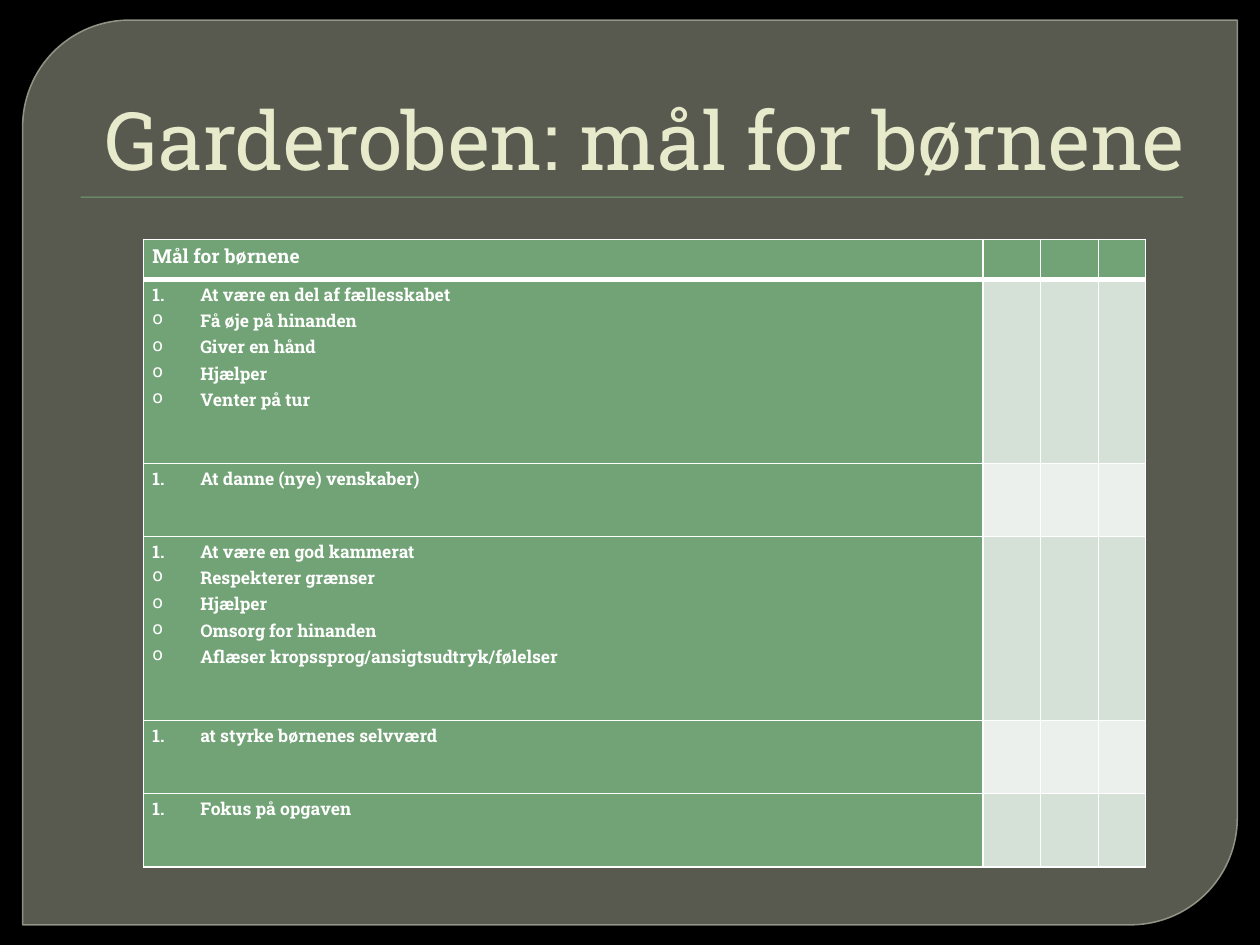
from dataclasses import dataclass

from lxml import etree
from pptx import Presentation
from pptx import util as u
from pptx.dml.color import RGBColor
from pptx.enum import shapes, text
from pptx.oxml.ns import qn

FONT = "Roboto Slab"
GREEN, WHITE, CREAM = "72A376", "FFFFFF", "E7EACB"
BANDS = ("D5E0D6", "EBF0EC")
COLUMNS = (6.66, 0.46, 0.46, 0.37)
HEADER_HEIGHT = 0.32


@dataclass
class Goal:
    title: str
    height: float = 0.58
    points: tuple[str, ...] = ()


GOALS = [
    Goal("At være en del af fællesskabet", 1.46,
         ("Få øje på hinanden", "Giver en hånd", "Hjælper", "Venter på tur")),
    Goal("At danne (nye) venskaber)"),
    Goal("At være en god kammerat", 1.46,
         ("Respekterer grænser", "Hjælper", "Omsorg for hinanden",
          "Aflæser kropssprog/ansigtsudtryk/følelser")),
    Goal("at styrke børnenes selvværd"),
    Goal("Fokus på opgaven"),
]


def paint(fill, color: str, alpha: int = 100) -> None:
    fill.solid()
    fill.fore_color.rgb = RGBColor.from_string(color)
    if alpha < 100:
        clr = fill._xPr.find(".//" + qn("a:srgbClr"))
        etree.SubElement(clr, qn("a:alpha"), val=str(alpha * 1000))


def add_box(slide, kind, left: float, top: float, width: float, height: float,
            color: str, alpha: int = 100):
    sp = slide.shapes.add_shape(kind, u.Inches(left), u.Inches(top),
                                u.Inches(width), u.Inches(height))
    sp.shadow.inherit = False
    paint(sp.fill, color, alpha)
    sp.line.fill.background()
    return sp


def write(p, content: str, *, size: float, color: str = WHITE, bold: bool = False,
          align=None, spacing: float | None = None, bullet: str | None = None) -> None:
    r = p.add_run()
    r.text = content
    r.font.name, r.font.size, r.font.bold = FONT, u.Pt(size), bold
    r.font.color.rgb = RGBColor.from_string(color)
    p.alignment = align
    p.line_spacing = spacing
    if bullet:
        pPr = p._p.get_or_add_pPr()
        indent = u.Inches(0.38)
        pPr.set("marL", str(indent))
        pPr.set("indent", str(-indent))
        if bullet == "1.":
            etree.SubElement(pPr, qn("a:buAutoNum"), type="arabicPeriod")
        else:
            etree.SubElement(pPr, qn("a:buChar"), char=bullet)


def style_cell(cell, color: str, top: float = 1, bottom: float = 1) -> None:
    cell.margin_left = cell.margin_right = u.Inches(0.07)
    cell.margin_top = cell.margin_bottom = 0
    tcPr = cell._tc.get_or_add_tcPr()
    for side, width in (("L", 1), ("R", 1), ("T", top), ("B", bottom)):
        ln = etree.SubElement(tcPr, qn(f"a:ln{side}"), w=str(u.Pt(width)))
        fill = etree.SubElement(ln, qn("a:solidFill"))
        etree.SubElement(fill, qn("a:srgbClr"), val=WHITE)
    paint(cell.fill, color)


def add_goal_table(slide, goals: list[Goal]) -> None:
    heights = [HEADER_HEIGHT] + [goal.height for goal in goals]
    table = slide.shapes.add_table(
        len(heights), len(COLUMNS), u.Inches(1.14), u.Inches(1.9),
        u.Inches(sum(COLUMNS)), u.Inches(sum(heights))).table
    for column, width in zip(table.columns, COLUMNS):
        column.width = u.Inches(width)
    for i, height in enumerate(heights):
        table.rows[i].height = u.Inches(height)
        for j in range(len(COLUMNS)):
            color = GREEN if i == 0 or j == 0 else BANDS[(i - 1) % 2]
            style_cell(table.cell(i, j), color,
                       top=3 if i == 1 else 1, bottom=3 if i == 0 else 1)
    write(table.cell(0, 0).text_frame.paragraphs[0], "Mål for børnene",
          size=11, bold=True, spacing=1.15)
    for i, goal in enumerate(goals, 1):
        tf = table.cell(i, 0).text_frame
        write(tf.paragraphs[0], goal.title, size=10, bold=True, spacing=1.15, bullet="1.")
        for point in goal.points:
            write(tf.add_paragraph(), point, size=10, bold=True, spacing=1.15, bullet="o")


def main() -> None:
    prs = Presentation()
    prs.slide_width, prs.slide_height = u.Inches(10), u.Inches(7.5)
    s = prs.slides.add_slide(prs.slide_layouts[6])
    paint(s.background.fill, "000000")

    panel = add_box(s, shapes.MSO_SHAPE.ROUND_2_DIAG_RECTANGLE,
                    0.18, 0.16, 9.64, 7.18, "888B7B", 65)
    panel.adjustments[0], panel.adjustments[1] = 0.118, 0
    panel.line.width = u.Pt(0.87)
    paint(panel.line.fill, "9DA090", 88)
    add_box(s, shapes.MSO_SHAPE.RECTANGLE, 0.64, 1.56, 8.75, 0.01, GREEN)

    title = s.shapes.add_textbox(u.Inches(0.5), u.Inches(0.28), u.Inches(9), u.Inches(1.25))
    tf = title.text_frame
    tf.word_wrap = True
    tf.vertical_anchor = text.MSO_ANCHOR.BOTTOM
    write(tf.paragraphs[0], "Garderoben: mål for børnene", size=46, color=CREAM,
          align=text.PP_ALIGN.RIGHT)

    add_goal_table(s, GOALS)
    prs.save("out.pptx")


if __name__ == "__main__":
    main()
